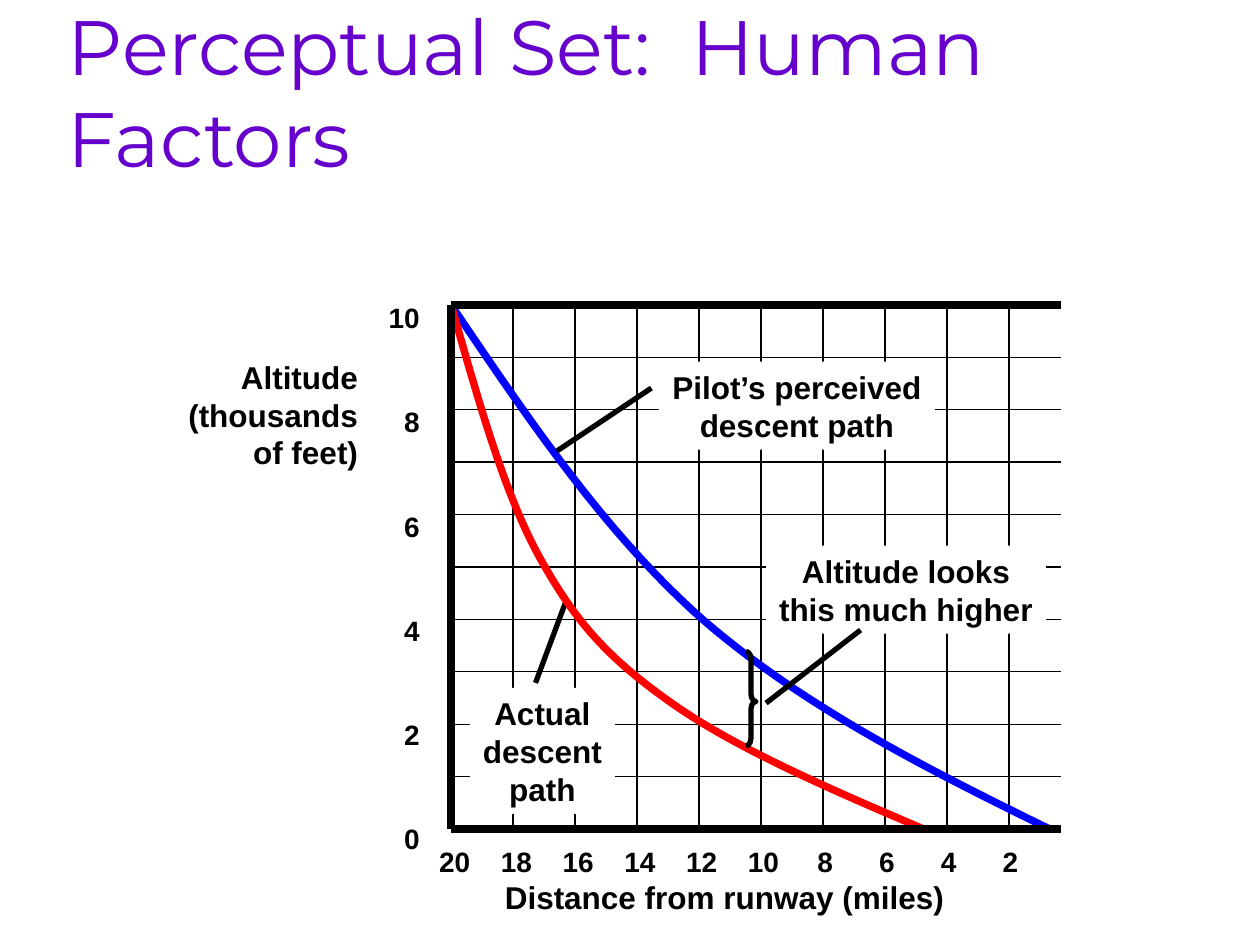
from typing import NamedTuple

import pptx
import pptx.dml.color
import pptx.enum.dml
import pptx.enum.shapes
import pptx.enum.text
import pptx.oxml
import pptx.oxml.ns
import pptx.util
from pptx.util import Inches

ALIGN = pptx.enum.text.PP_ALIGN
SHAPES = pptx.enum.shapes.MSO_SHAPE
BLACK, WHITE = "000000", "FFFFFF"
LEFT, RIGHT, TOP, BOTTOM = 3.58, 8.42, 2.42, 6.58
COLUMN_GAP = 0.49
ROWS, COLUMNS = 10, 9


class Line(NamedTuple):
    start: tuple[float, float]
    end: tuple[float, float]
    width: float = 3


class Curve(NamedTuple):
    color: str
    points: list[tuple[float, float]]


class Label(NamedTuple):
    area: tuple[float, float, float, float]
    lines: list[str]
    align: ALIGN = ALIGN.CENTER
    size: float = 18
    fill: str | None = WHITE
    spacing: float = 1


GRID = [
    Line((LEFT, y), (RIGHT, y), 0.75)
    for y in (TOP + (BOTTOM - TOP) * row / ROWS for row in range(1, ROWS))
] + [
    Line((x, TOP), (x, BOTTOM), 0.75)
    for x in (LEFT + 0.492 * column for column in range(1, COLUMNS + 1))
]
FRAME = [
    Line((LEFT, TOP), (LEFT, BOTTOM), 4.5),
    Line((LEFT, TOP), (RIGHT, TOP), 4.5),
    Line((LEFT, BOTTOM), (RIGHT, BOTTOM), 4.5),
]
ACTUAL_POINTER = Line((4.25, 5.42), (4.5, 4.75))
PERCEIVED_POINTER = Line((5.17, 3.08), (4.42, 3.58))
GAP_POINTER = Line((6.08, 5.58), (6.83, 5))
PERCEIVED_PATH = Curve("0000FF", [
    (3.58, 2.42), (4.19, 3.32), (4.79, 4.22), (5.58, 4.92),
    (6.38, 5.61), (7.35, 6.1), (8.33, 6.58),
])
ACTUAL_PATH = Curve("FF0000", [
    (3.58, 2.42), (3.79, 3.15), (3.99, 3.89), (4.28, 4.42),
    (4.57, 4.94), (4.82, 5.22), (5.33, 5.58),
    (5.84, 5.94), (6.58, 6.26), (7.33, 6.58),
])
ACTUAL_LABEL = Label((3.73, 5.46, 1.15, 1), ["Actual", "descent", "path"])
PERCEIVED_LABEL = Label((5.23, 2.87, 2.19, 0.7), ["Pilot’s perceived", "descent path"])
GAP_LABEL = Label((6.08, 4.33, 2.22, 0.7), ["Altitude looks", "this much higher"])
ALTITUDE_TICKS = Label((2.98, 1.78, 0.45, 5.07), [str(n) for n in range(10, -1, -2)],
                       ALIGN.RIGHT, 16, None, 3.1)
ALTITUDE_TITLE = Label((1.39, 2.79, 1.55, 1), ["Altitude", "(thousands", "of feet)"],
                       ALIGN.RIGHT, fill=None)


def rgb(color: str) -> pptx.dml.color.RGBColor:
    return pptx.dml.color.RGBColor.from_string(color)


def add_run(para, text: str, size: float, color: str = BLACK,
            font: str = "Arial", bold: bool = True) -> None:
    span = para.add_run()
    span.text = text
    span.font.size = pptx.util.Pt(size)
    span.font.name = font
    span.font.bold = bold
    span.font.color.rgb = rgb(color)


def set_line(shape, color: str, width: float) -> None:
    shape.line.color.rgb = rgb(color)
    shape.line.width = pptx.util.Pt(width)


def add_line(page, line: Line) -> None:
    connector = page.shapes.add_connector(
        pptx.enum.shapes.MSO_CONNECTOR.STRAIGHT,
        *(Inches(value) for value in line.start + line.end))
    set_line(connector, BLACK, line.width)
    properties = connector._element.spPr
    properties.append(pptx.oxml.parse_xml(
        f"<a:effectLst {pptx.oxml.ns.nsdecls('a')}/>"))


def add_curve(page, curve: Curve) -> None:
    """Draw a Bézier curve, given as a start and triples of control points."""
    points = [(Inches(x), Inches(y)) for x, y in curve.points]
    builder = page.shapes.build_freeform(*points[0])
    builder.add_line_segments(points[1:], close=False)
    shape = builder.convert_to_shape()
    shape.shadow.inherit = False
    shape.fill.background()
    set_line(shape, curve.color, 4.25)
    segments = list(shape._element.iter(pptx.oxml.ns.qn("a:lnTo")))
    for first in range(0, len(segments), 3):
        bezier = pptx.oxml.parse_xml(
            f"<a:cubicBezTo {pptx.oxml.ns.nsdecls('a')}/>")
        segments[first].addprevious(bezier)
        for segment in segments[first:first + 3]:
            bezier.append(segment[0])
            segment.getparent().remove(segment)


def add_label(page, label: Label) -> None:
    box = page.shapes.add_textbox(*(Inches(value) for value in label.area))
    if label.fill:
        box.fill.solid()
        box.fill.fore_color.rgb = rgb(label.fill)
    frame = box.text_frame
    frame.word_wrap = False
    for index, text in enumerate(label.lines):
        para = frame.add_paragraph() if index else frame.paragraphs[0]
        para.alignment = label.align
        para.line_spacing = label.spacing
        add_run(para, text, label.size)


def add_title(page) -> None:
    box = page.shapes.add_textbox(Inches(0.44), Inches(0.25), Inches(7.64), Inches(1.25))
    frame = box.text_frame
    frame.word_wrap = True
    frame.vertical_anchor = pptx.enum.text.MSO_ANCHOR.BOTTOM
    add_run(frame.paragraphs[0], "Perceptual Set:  Human Factors", 44,
            "6600CC", "Montserrat", False)


def add_brace(page) -> None:
    brace = page.shapes.add_shape(SHAPES.RIGHT_BRACE, Inches(5.92), Inches(5.17),
                                  Inches(0.08), Inches(0.75))
    brace.shadow.inherit = False
    brace.fill.background()
    brace.adjustments[0], brace.adjustments[1] = 0.75, 0.53
    set_line(brace, BLACK, 3)


def add_distance_axis(page) -> None:
    """Write the distances at centred tab stops, with the axis title below."""
    box = page.shapes.add_textbox(Inches(3.32), Inches(6.65), Inches(4.86), Inches(0.67))
    frame = box.text_frame
    frame.word_wrap = True
    ticks = frame.paragraphs[0]
    distances = range(20, 0, -2)
    stops = "".join(
        f'<a:tab pos="{Inches(0.19 + COLUMN_GAP * index)}" algn="ctr"/>'
        for index in range(len(distances)))
    ticks._p.get_or_add_pPr().append(pptx.oxml.parse_xml(
        f"<a:tabLst {pptx.oxml.ns.nsdecls('a')}>{stops}</a:tabLst>"))
    add_run(ticks, "".join(f"\t{distance}" for distance in distances), 16)
    title = frame.add_paragraph()
    title.alignment = ALIGN.CENTER
    add_run(title, "Distance from runway (miles)", 18)


def main() -> None:
    deck = pptx.Presentation()
    deck.slide_width, deck.slide_height = Inches(10), Inches(7.5)
    page = deck.slides.add_slide(deck.slide_layouts[6])
    add_title(page)
    for line in [ACTUAL_POINTER] + GRID:
        add_line(page, line)
    for curve in (PERCEIVED_PATH, ACTUAL_PATH):
        add_curve(page, curve)
    for line in FRAME:
        add_line(page, line)
    for label in (ACTUAL_LABEL, PERCEIVED_LABEL, GAP_LABEL):
        add_label(page, label)
    add_brace(page)
    for line in (PERCEIVED_POINTER, GAP_POINTER):
        add_line(page, line)
    add_distance_axis(page)
    for label in (ALTITUDE_TICKS, ALTITUDE_TITLE):
        add_label(page, label)
    deck.save("out.pptx")


if __name__ == "__main__":
    main()
